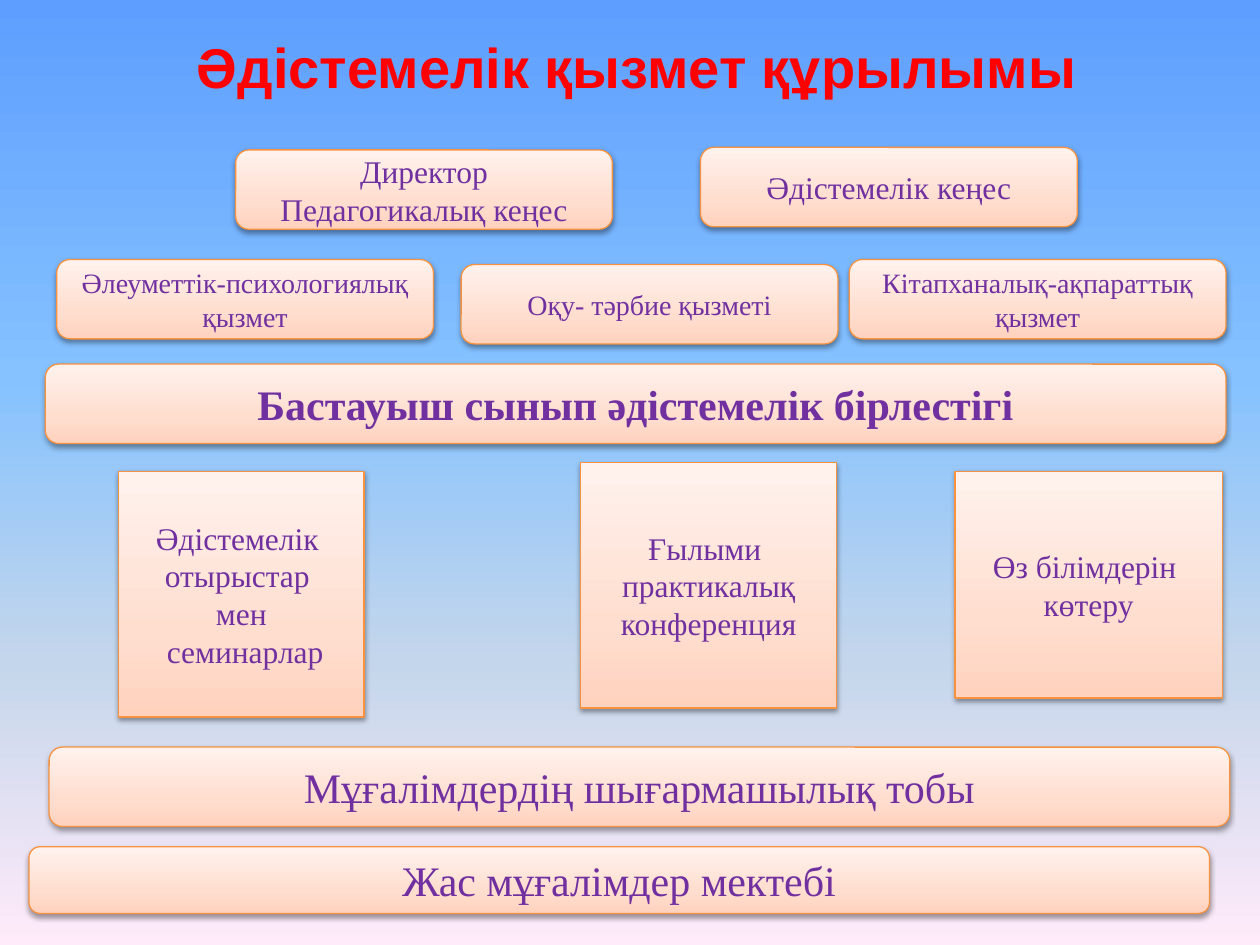
from pptx import Presentation
from pptx.dml.color import RGBColor
from pptx.enum.shapes import MSO_SHAPE
from pptx.enum.text import MSO_ANCHOR, MSO_AUTO_SIZE, PP_ALIGN
from pptx.oxml import parse_xml
from pptx.oxml.ns import nsdecls
from pptx.util import Inches, Pt

COLORS = {"title": "FF0000", "edge": "467AB8", "text": "7030A0",
          "line": "F69240", "shadow": "000000"}
SKY = [(0, "5E9EFF"), (40, "85C2FF"), (70, "C4D6EB"), (100, "FFEBFA")]
PEACH = [(0, "FFD2BD"), (35, "FFDED0"), (100, "FFF2ED")]


class Deck:
    """Holds the style and the current slide."""

    def __init__(self):
        self.prs = Presentation()
        self.prs.slide_width = Inches(10)
        self.prs.slide_height = Inches(7.5)
        self.slide = self.prs.slides.add_slide(self.prs.slide_layouts[6])

    def blend(self, fill, node, stops, angle):
        fill.gradient()
        fill.gradient_angle = angle
        items = node.xpath(".//a:gradFill/a:gsLst")[0]
        for old in list(items):
            items.remove(old)
        for pos, color in stops:
            items.append(parse_xml(
                f'<a:gs {nsdecls("a")} pos="{pos * 1000}">'
                f'<a:srgbClr val="{color}"/></a:gs>'))

    def back(self):
        self.blend(self.slide.background.fill, self.slide.element, SKY, 270)

    def shade(self, shape):
        shape.shadow.inherit = False
        shape.element.xpath("./p:spPr/a:effectLst")[0].append(parse_xml(
            f'<a:outerShdw {nsdecls("a")} blurRad="{Pt(3.1)}" dist="{Pt(1.6)}" '
            f'dir="5400000" rotWithShape="0"><a:srgbClr val="{COLORS["shadow"]}">'
            '<a:alpha val="38000"/></a:srgbClr></a:outerShdw>'))

    def label(self, frame, text, size, face, color, bold):
        frame.text = text
        for para in frame.paragraphs:
            para.alignment = PP_ALIGN.CENTER
            for run in para.runs:
                run.font.size = Pt(size)
                run.font.name = face
                run.font.bold = bold
                run.font.color.rgb = RGBColor.from_string(COLORS[color])

    def title(self, text, x, y, w, h):
        box = self.slide.shapes.add_textbox(Inches(x), Inches(y), Inches(w), Inches(h))
        frame = box.text_frame
        frame.word_wrap = True
        frame.auto_size = MSO_AUTO_SIZE.SHAPE_TO_FIT_TEXT
        self.label(frame, text, 32, "Arial", "title", True)
        for props in box.element.xpath(".//a:rPr"):
            props.insert(0, parse_xml(
                f'<a:ln {nsdecls("a")} w="{Pt(0.83)}"><a:solidFill>'
                f'<a:srgbClr val="{COLORS["edge"]}"/></a:solidFill></a:ln>'))

    def card(self, kind, text, x, y, w, h, size, bold=False):
        shape = self.slide.shapes.add_shape(
            kind, Inches(x), Inches(y), Inches(w), Inches(h))
        self.blend(shape.fill, shape.element, PEACH, 90)
        shape.line.color.rgb = RGBColor.from_string(COLORS["line"])
        shape.line.width = Pt(0.75)
        self.shade(shape)
        frame = shape.text_frame
        frame.word_wrap = False
        frame.vertical_anchor = MSO_ANCHOR.MIDDLE
        self.label(frame, text, size, "Times New Roman", "text", bold)

    def block(self, text, x, y, w, h):
        self.card(MSO_SHAPE.RECTANGLE, text, x, y, w, h, 18)

    def pill(self, text, x, y, size):
        self.card(MSO_SHAPE.ROUNDED_RECTANGLE, text, x, y, 2.99, 0.63, size)

    def bar(self, text, x, y, h=0.63, bold=False):
        self.card(MSO_SHAPE.ROUNDED_RECTANGLE, text, x, y, 9.37, h, 24, bold)


def main():
    deck = Deck()
    deck.back()
    deck.block("Әдістемелік \nотырыстар \nмен\n семинарлар", 0.94, 3.74, 1.95, 1.95)
    deck.block("Ғылыми \nпрактикалық\nконференция", 4.61, 3.67, 2.03, 1.95)
    deck.pill("Директор\nПедагогикалық кеңес", 1.87, 1.19, 18)
    deck.pill("Әдістемелік кеңес", 5.56, 1.17, 18)
    deck.bar("Мұғалімдердің шығармашылық тобы", 0.39, 5.93)
    deck.bar("Жас мұғалімдер мектебі", 0.23, 6.72, h=0.53)
    deck.block("Өз білімдерін \nкөтеру", 7.58, 3.74, 2.12, 1.8)
    deck.bar("Бастауыш сынып әдістемелік бірлестігі", 0.36, 2.89, bold=True)
    deck.pill("Әлеуметтік-психологиялық\nқызмет", 0.45, 2.06, 16)
    deck.pill("Оқу- тәрбие қызметі", 3.66, 2.1, 16)
    deck.pill("Кітапханалық-ақпараттық\nқызмет", 6.74, 2.06, 16)
    deck.title("Әдістемелік қызмет құрылымы", 1.46, 0.21, 7.19, 0.64)
    deck.prs.save("out.pptx")


if __name__ == "__main__":
    main()
